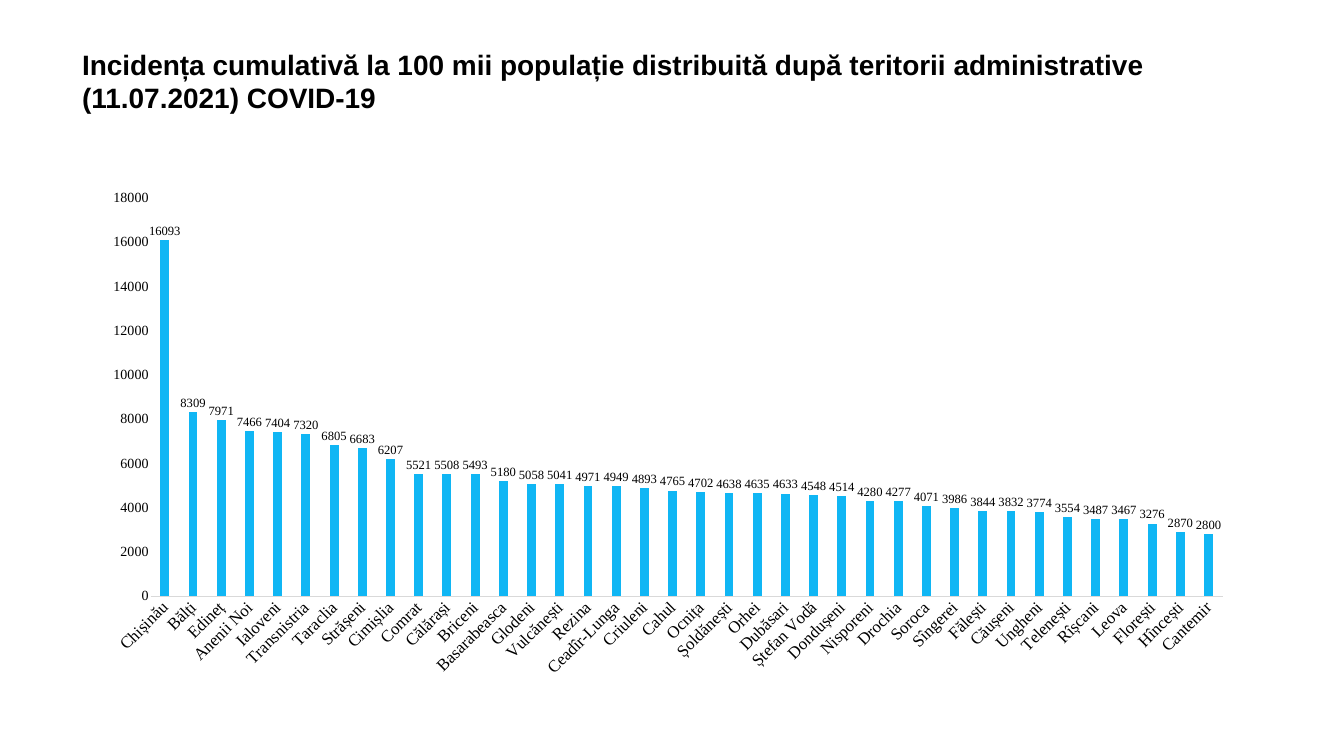
from typing import NamedTuple

import pptx
import pptx.chart.data
import pptx.dml.color
import pptx.enum.chart
import pptx.enum.text
import pptx.util

Inches = pptx.util.Inches
COLORS = {"text": "000000", "bar": "10B6F4", "axis": "D9D9D9"}
TITLE_LINES = (
    "Incidența cumulativă la 100 mii populație distribuită după teritorii administrative",
    "(11.07.2021) COVID-19",
)


class Territory(NamedTuple):
    name: str
    incidence: int


TERRITORIES = [
    Territory("Chișinău", 16093),
    Territory("Bălți", 8309),
    Territory("Edineț", 7971),
    Territory("Anenii Noi", 7466),
    Territory("Ialoveni", 7404),
    Territory("Transnistria", 7320),
    Territory("Taraclia", 6805),
    Territory("Strășeni", 6683),
    Territory("Cimișlia", 6207),
    Territory("Comrat", 5521),
    Territory("Călărași", 5508),
    Territory("Briceni", 5493),
    Territory("Basarabeasca", 5180),
    Territory("Glodeni", 5058),
    Territory("Vulcănești", 5041),
    Territory("Rezina", 4971),
    Territory("Ceadîr-Lunga", 4949),
    Territory("Criuleni", 4893),
    Territory("Cahul", 4765),
    Territory("Ocnița", 4702),
    Territory("Șoldănești", 4638),
    Territory("Orhei", 4635),
    Territory("Dubăsari", 4633),
    Territory("Ștefan Vodă", 4548),
    Territory("Dondușeni", 4514),
    Territory("Nisporeni", 4280),
    Territory("Drochia", 4277),
    Territory("Soroca", 4071),
    Territory("Sîngerei", 3986),
    Territory("Fălești", 3844),
    Territory("Căușeni", 3832),
    Territory("Ungheni", 3774),
    Territory("Telenești", 3554),
    Territory("Rîșcani", 3487),
    Territory("Leova", 3467),
    Territory("Florești", 3276),
    Territory("Hîncești", 2870),
    Territory("Cantemir", 2800),
]


def color(name: str) -> pptx.dml.color.RGBColor:
    return pptx.dml.color.RGBColor.from_string(COLORS[name])


def style_font(font, size: float, family: str = "Times New Roman", bold: bool = False) -> None:
    font.name = family
    font.size = pptx.util.Pt(size)
    font.bold = bold
    font.color.rgb = color("text")


def add_title(page) -> None:
    box = page.shapes.add_textbox(Inches(1.53), Inches(0.89), Inches(25.63), Inches(1.45))
    frame = box.text_frame
    frame.word_wrap = True
    frame.auto_size = pptx.enum.text.MSO_AUTO_SIZE.SHAPE_TO_FIT_TEXT
    frame.text = "\n".join(TITLE_LINES)
    for para in frame.paragraphs:
        style_font(para.font, 40, "Arial", bold=True)


def style_axis(axis, label_size: float) -> None:
    axis.has_major_gridlines = False
    axis.major_tick_mark = pptx.enum.chart.XL_TICK_MARK.NONE
    axis.minor_tick_mark = pptx.enum.chart.XL_TICK_MARK.NONE
    style_font(axis.tick_labels.font, label_size)


def add_incidence_chart(page) -> None:
    data = pptx.chart.data.CategoryChartData(number_format="0")
    data.categories = [territory.name for territory in TERRITORIES]
    data.add_series("Series 1", [territory.incidence for territory in TERRITORIES])
    chart = page.shapes.add_chart(
        pptx.enum.chart.XL_CHART_TYPE.COLUMN_CLUSTERED,
        Inches(1.79), Inches(3.57), Inches(22.93), Inches(10.07), data,
    ).chart
    chart.has_legend = False
    chart.has_title = False
    style_font(chart.font, 20)

    # Axes, with the territory names slanted by 45 degrees
    names, values = chart.category_axis, chart.value_axis
    style_axis(names, 24)
    names.format.line.color.rgb = color("axis")
    names.format.line.width = pptx.util.Pt(0.75)
    names_body = names.tick_labels.font and names._element.txPr.bodyPr
    names_body.set("rot", "-2700000")
    names_body.set("vert", "horz")
    style_axis(values, 20)
    values.format.line.fill.background()
    values.minimum_scale, values.maximum_scale, values.major_unit = 0, 18000, 2000
    values.tick_labels.number_format = "0"
    values.tick_labels.number_format_is_linked = False

    # Bars and their values
    plot = chart.plots[0]
    plot.gap_width = 219
    plot.overlap = -27
    plot.vary_by_categories = False
    series = plot.series[0]
    series.format.fill.solid()
    series.format.fill.fore_color.rgb = color("bar")
    labels = series.data_labels
    labels.show_value = True
    labels.position = pptx.enum.chart.XL_LABEL_POSITION.OUTSIDE_END
    labels.number_format = "0"
    labels.number_format_is_linked = False
    style_font(labels.font, 18)


def main() -> None:
    deck = pptx.Presentation()
    deck.slide_width, deck.slide_height = Inches(26.67), Inches(15)
    page = deck.slides.add_slide(deck.slide_layouts[6])
    add_title(page)
    add_incidence_chart(page)
    deck.save("out.pptx")


if __name__ == "__main__":
    main()
